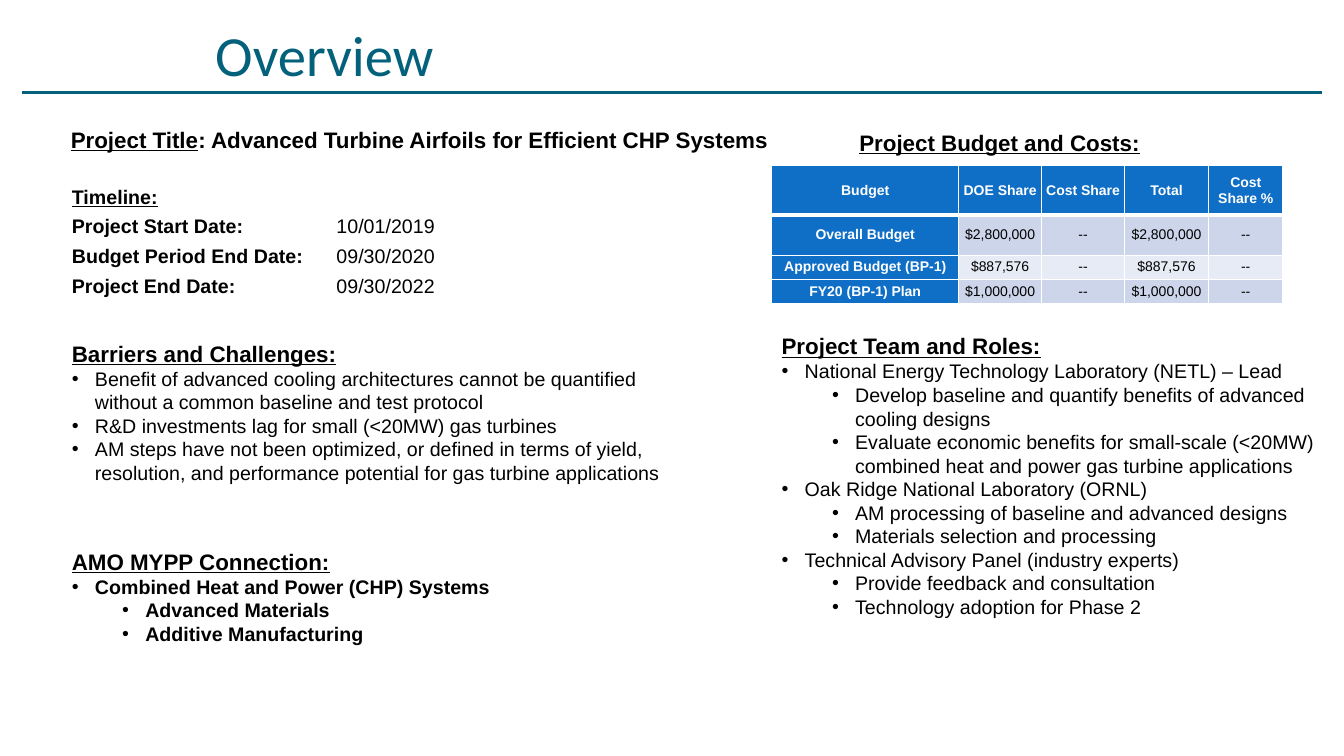
import dataclasses

import lxml.etree
import pptx
import pptx.dml.color
import pptx.enum.shapes
import pptx.enum.text
import pptx.oxml.ns
import pptx.util

SCALE = 9525  # EMU in one px


@dataclasses.dataclass(frozen=True)
class Theme:
    teal: str = "04617B"
    blue: str = "0F6FC6"
    dark: str = "CCD5EA"
    light: str = "E7EBF5"
    black: str = "000000"
    white: str = "FFFFFF"
    title: float = 40.5
    head: float = 16
    body: float = 14
    cell: float = 10
    font: str = "Arial"
    face: str = "Calibri"


THEME = Theme()

BUDGET = [
    ["Budget", "DOE Share", "Cost Share", "Total", "Cost Share %"],
    ["Overall Budget", "$2,800,000", "--", "$2,800,000", "--"],
    ["Approved Budget (BP-1)", "$887,576", "--", "$887,576", "--"],
    ["FY20 (BP-1) Plan", "$1,000,000", "--", "$1,000,000", "--"],
]

DATES = [
    ("Project Start Date:", "10/01/2019"),
    ("Budget Period End Date:", "09/30/2020"),
    ("Project End Date:", "09/30/2022"),
]

# Bullets as (level, text)
BARRIERS = [
    (0, "Benefit of advanced cooling architectures cannot be quantified "
        "without a common baseline and test protocol"),
    (0, "R&D investments lag for small (<20MW) gas turbines"),
    (0, "AM steps have not been optimized, or defined in terms of yield, "
        "resolution, and performance potential for gas turbine applications"),
]

TEAM = [
    (0, "National Energy Technology Laboratory (NETL) – Lead"),
    (1, "Develop baseline and quantify benefits of advanced cooling designs"),
    (1, "Evaluate economic benefits for small-scale (<20MW) combined heat "
        "and power gas turbine applications"),
    (0, "Oak Ridge National Laboratory (ORNL)"),
    (1, "AM processing of baseline and advanced designs"),
    (1, "Materials selection and processing"),
    (0, "Technical Advisory Panel (industry experts)"),
    (1, "Provide feedback and consultation"),
    (1, "Technology adoption for Phase 2"),
]

LINKS = [
    (0, "Combined Heat and Power (CHP) Systems"),
    (1, "Advanced Materials"),
    (1, "Additive Manufacturing"),
]


def px(size):
    return pptx.util.Emu(size * SCALE)


def rgb(code):
    return pptx.dml.color.RGBColor.from_string(code)


def node(parent, tag, **attrs):
    return lxml.etree.SubElement(parent, pptx.oxml.ns.qn(tag), attrs)


# Text
def add_run(para, text, size, bold=False, under=False,
            color=THEME.black, font=THEME.font):
    run = para.add_run()
    run.text = text
    run.font.size = pptx.util.Pt(size)
    run.font.name = font
    run.font.bold = bold
    run.font.underline = under
    run.font.color.rgb = rgb(color)


def add_box(slide, *area):
    frame = slide.shapes.add_textbox(*map(px, area)).text_frame
    frame.word_wrap = True
    frame.auto_size = pptx.enum.text.MSO_AUTO_SIZE.SHAPE_TO_FIT_TEXT
    return frame


def add_head(slide, text, *area, size=THEME.head):
    frame = add_box(slide, *area)
    add_run(frame.paragraphs[0], text, size, bold=True, under=True)
    return frame


def add_list(slide, head, items, *area, bold=False):
    frame = add_head(slide, head, *area)
    for level, text in items:
        para = frame.add_paragraph()
        para.level = level
        props = para._p.get_or_add_pPr()
        props.set("marL", str(px(22 + 48 * level)))
        props.set("indent", str(px(-22)))
        node(props, "a:buFont", typeface=THEME.font)
        node(props, "a:buChar", char="•")
        add_run(para, text, THEME.body, bold)


# Title and rule
def add_title(slide):
    line = slide.shapes.add_connector(
        pptx.enum.shapes.MSO_CONNECTOR.STRAIGHT,
        px(21), px(88), px(1259), px(88))
    line.line.color.rgb = rgb(THEME.teal)
    line.line.width = pptx.util.Pt(2.25)
    node(line._element.spPr, "a:effectLst")
    frame = add_box(slide, 205, 60, 648, 24)
    frame.auto_size = pptx.enum.text.MSO_AUTO_SIZE.NONE
    frame.vertical_anchor = pptx.enum.text.MSO_ANCHOR.BOTTOM
    frame.margin_left = frame.margin_right = frame.margin_bottom = 0
    add_run(frame.paragraphs[0], "Overview", THEME.title,
            color=THEME.teal, font=THEME.face)


# Timeline with dates on one tab stop
def add_dates(slide):
    frame = add_head(slide, "Timeline:", 59, 171, 420, 120, size=THEME.body)
    for label, date in DATES:
        para = frame.add_paragraph()
        add_run(para, label, THEME.body, bold=True)
        add_run(para, "\t" + date, THEME.body)
    for para in frame.paragraphs:
        para.space_after = pptx.util.Pt(4.5)
        tabs = node(para._p.get_or_add_pPr(), "a:tabLst")
        node(tabs, "a:tab", pos=str(px(252)), algn="l")


# Budget table
def add_edge(cell, side, width):
    edge = node(cell._tc.get_or_add_tcPr(), "a:ln" + side,
                w=str(pptx.util.Pt(width)))
    fill = node(edge, "a:solidFill")
    node(fill, "a:srgbClr", val=THEME.white)


def fill_cell(cell, text, row, col):
    label = row == 0 or col == 0
    for side in "LRTB":
        thick = (row, side) in [(0, "B"), (1, "T")]
        add_edge(cell, side, 3 if thick else 1)
    band = THEME.dark if row % 2 else THEME.light
    cell.fill.solid()
    cell.fill.fore_color.rgb = rgb(THEME.blue if label else band)
    cell.vertical_anchor = pptx.enum.text.MSO_ANCHOR.MIDDLE
    cell.margin_left = cell.margin_right = px(4)
    cell.margin_top = cell.margin_bottom = 0
    para = cell.text_frame.paragraphs[0]
    para.alignment = pptx.enum.text.PP_ALIGN.CENTER
    add_run(para, text, THEME.cell, bold=label,
            color=THEME.white if label else THEME.black)


def add_budget(slide):
    wide, high = [178, 79, 79, 80, 71], [47, 38, 23, 23]
    table = slide.shapes.add_table(
        len(high), len(wide), px(735), px(158),
        px(sum(wide)), px(sum(high))).table
    table.first_row = table.horz_banding = False
    for col, size in zip(table.columns, wide):
        col.width = px(size)
    for row, size in zip(table.rows, high):
        row.height = px(size)
    for row, texts in enumerate(BUDGET):
        for col, text in enumerate(texts):
            fill_cell(table.cell(row, col), text, row, col)


def main():
    deck = pptx.Presentation()
    deck.slide_width, deck.slide_height = px(1280), px(720)
    slide = deck.slides.add_slide(deck.slide_layouts[6])
    add_title(slide)

    # Left column
    name = add_head(slide, "Project Title", 58, 115, 733, 36)
    add_run(name.paragraphs[0],
            ": Advanced Turbine Airfoils for Efficient CHP Systems",
            THEME.head, bold=True)
    add_dates(slide)
    add_list(slide, "Barriers and Challenges:", BARRIERS, 59, 319, 617, 149)
    add_list(slide, "AMO MYPP Connection:", LINKS, 59, 517, 471, 104,
             bold=True)

    # Right column
    add_head(slide, "Project Budget and Costs:", 809, 118, 296, 36)
    add_budget(slide)
    add_list(slide, "Project Team and Roles:", TEAM, 735, 312, 540, 284)
    deck.save("out.pptx")


if __name__ == "__main__":
    main()
